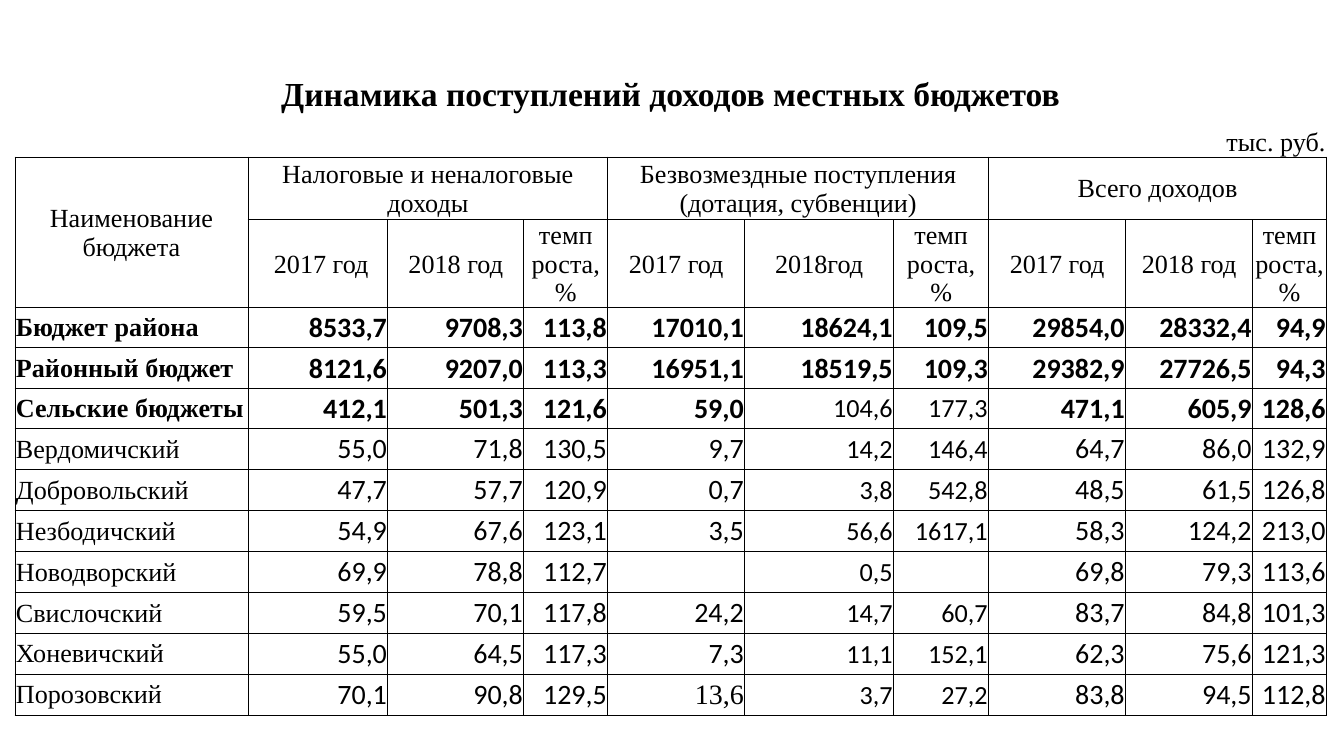
import pptx
import pptx.util
import pptx.dml.color
import pptx.enum.text
import pptx.oxml.ns
from lxml import etree

PX = 914400 / 134.4
SERIF, SANS = "Times New Roman", "Calibri"
INK = "000000"
ALIGN = pptx.enum.text.PP_ALIGN
ANCHOR = pptx.enum.text.MSO_ANCHOR

COLS = [233, 140, 100, 36, 84, 120, 17, 149, 95, 98, 39, 81, 46, 74]
ROWS = [43, 43, 63, 63, 40, 41, 40] + [41] * 7

# First column and column count of each cell
UNIT = [(0, 1), (1, 2), (3, 3), (6, 3), (9, 1), (10, 2), (12, 2)]
GROUP = [(1, 4), (5, 4), (9, 5)]
BODY = [(0, 1), (1, 1), (2, 2), (4, 1), (5, 2), (7, 1), (8, 1),
        (9, 2), (11, 2), (13, 1)]

HEADS = ["Налоговые и неналоговые доходы",
         "Безвозмездные поступления (дотация, субвенции)",
         "Всего доходов"]
RATE = "темп\nроста, %"
YEARS = [" 2017 год", "2018 год", RATE, "2017 год", "2018год", RATE,
         "2017 год", "2018 год", RATE]
DATA = [
    "Бюджет района|8533,7|9708,3|113,8|17010,1|18624,1|109,5|29854,0|28332,4|94,9",
    "Районный бюджет|8121,6|9207,0|113,3|16951,1|18519,5|109,3|29382,9|27726,5|94,3",
    "Сельские бюджеты|412,1|501,3|121,6|59,0|104,6|177,3|471,1|605,9|128,6",
    "Вердомичский|55,0|71,8|130,5|9,7|14,2|146,4|64,7|86,0|132,9",
    "Добровольский|47,7|57,7|120,9|0,7|3,8|542,8|48,5|61,5|126,8",
    "Незбодичский|54,9|67,6|123,1|3,5|56,6|1617,1|58,3|124,2|213,0",
    "Новодворский|69,9|78,8|112,7||0,5||69,8|79,3|113,6",
    "Свислочский|59,5|70,1|117,8|24,2|14,7|60,7|83,7|84,8|101,3",
    "Хоневичский|55,0|64,5|117,3|7,3|11,1|152,1|62,3|75,6|121,3",
    "Порозовский|70,1|90,8|129,5|13,6|3,7|27,2|83,8|94,5|112,8",
]


def px(n):
    return round(n * PX)


def color(code):
    return pptx.dml.color.RGBColor.from_string(code)


def tag(parent, name, **attrs):
    return etree.SubElement(parent, pptx.oxml.ns.qn("a:" + name), **attrs)


def frame(cell, sides):
    """Rule the named sides of a cell and clear the others."""
    props = cell._tc.get_or_add_tcPr()
    for side in "LRTB":
        line = tag(props, "ln" + side, w="6350")
        if side in sides:
            tag(tag(line, "solidFill"), "srgbClr", val=INK)
        else:
            tag(line, "noFill")
    cell.fill.background()


def write(cell, text, align=ALIGN.CENTER, size=14, font=SERIF, bold=False):
    cell.text_frame.text = text
    for para in cell.text_frame.paragraphs:
        para.alignment = align
        for run in para.runs:
            run.font.size = pptx.util.Pt(size)
            run.font.name = font
            run.font.bold = bold
            run.font.color.rgb = color(INK)


def merge(grid, row, spans):
    for col, count in spans:
        if count > 1:
            grid.cell(row, col).merge(grid.cell(row, col + count - 1))


def setup(grid):
    """Set sizes, margins, borders and merged cells."""
    grid.first_row = grid.horz_banding = False
    for col, wide in zip(grid.columns, COLS):
        col.width = px(wide)
    for num, (row, high) in enumerate(zip(grid.rows, ROWS)):
        row.height = px(high)
        for cell in row.cells:
            cell.margin_left = cell.margin_right = cell.margin_top = px(1)
            cell.margin_bottom = 0
            cell.vertical_anchor = ANCHOR.BOTTOM if num < 2 else ANCHOR.MIDDLE
            frame(cell, ["", "B"][num] if num < 2 else "LRTB")
    merge(grid, 0, [(0, len(COLS))])
    merge(grid, 1, UNIT)
    grid.cell(2, 0).merge(grid.cell(3, 0))
    merge(grid, 2, GROUP)
    for row in range(3, len(ROWS)):
        merge(grid, row, BODY)


def head(grid):
    """Title, unit note and two header rows."""
    write(grid.cell(0, 0), "Динамика поступлений доходов местных бюджетов",
          size=18, bold=True)
    write(grid.cell(1, 12), "тыс. руб.", ALIGN.RIGHT)
    write(grid.cell(2, 0), "Наименование бюджета")
    for (col, _), text in zip(GROUP, HEADS):
        write(grid.cell(2, col), text)
    for (col, _), text in zip(BODY[1:], YEARS):
        write(grid.cell(3, col), text)


def body(grid):
    """One row per budget; the first three are totals."""
    for num, line in enumerate(DATA):
        for (col, _), text in zip(BODY, line.split("|")):
            cell = grid.cell(num + 4, col)
            small = col in (7, 8) and num >= 2
            if col == 0:
                write(cell, text, ALIGN.LEFT, bold=num < 3)
            else:
                write(cell, text, ALIGN.RIGHT, 14 if small else 15, SANS,
                      num < 3 and not small)
    # One figure is set in the serif face
    grid.cell(13, 5).text_frame.paragraphs[0].runs[0].font.name = SERIF


def shrink(grid):
    """Keep blank cells from stretching their rows."""
    for cell in grid.iter_cells():
        if not cell.text_frame.text:
            tag(cell.text_frame.paragraphs[0]._p, "endParaRPr", sz="1400")


def table(slide, left, top):
    shape = slide.shapes.add_table(len(ROWS), len(COLS), px(left), px(top),
                                   px(sum(COLS)), px(sum(ROWS)))
    grid = shape.table
    setup(grid)
    head(grid)
    body(grid)
    shrink(grid)


def main():
    deck = pptx.Presentation()
    deck.slide_width, deck.slide_height = px(1344), px(756)
    slide = deck.slides.add_slide(deck.slide_layouts[6])
    table(slide, 15, 71)
    deck.save("out.pptx")


if __name__ == "__main__":
    main()
